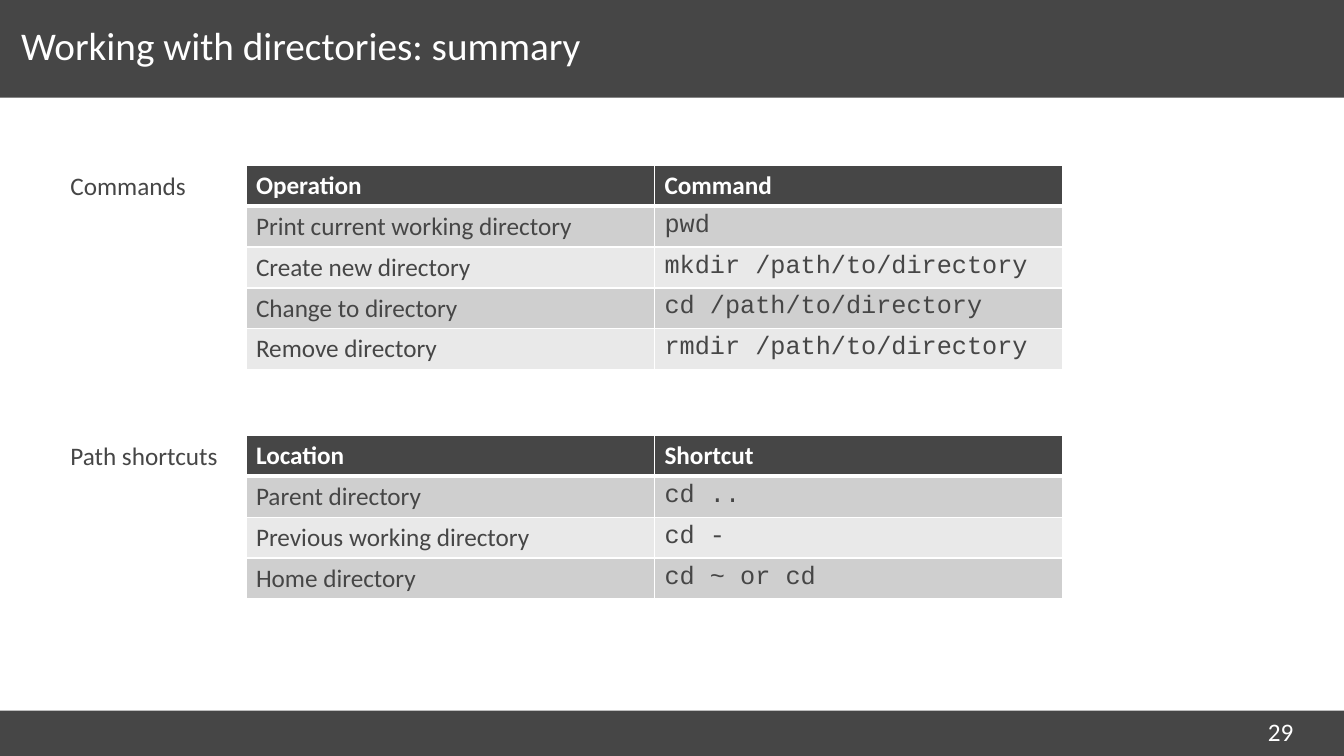
from dataclasses import dataclass
from typing import Any

from lxml import etree
from pptx import Presentation
from pptx.dml.color import RGBColor
from pptx.enum.shapes import MSO_SHAPE
from pptx.enum.text import MSO_ANCHOR, MSO_AUTO_SIZE, PP_ALIGN
from pptx.oxml.ns import qn
from pptx.util import Emu, Inches, Pt

RECT = MSO_SHAPE.RECTANGLE
LEFT = PP_ALIGN.LEFT
TOP, MIDDLE = MSO_ANCHOR.TOP, MSO_ANCHOR.MIDDLE
NO_FIT, GROW = MSO_AUTO_SIZE.NONE, MSO_AUTO_SIZE.SHAPE_TO_FIT_TEXT
SLIDE_W, SLIDE_H = Inches(13.33), Inches(7.5)
GRID = 100
TABLE_X, TABLE_COL, TABLE_ROW = 18.3, 30.4, 5.41
LABEL_X, LABEL_H = 4.5, 5.33


@dataclass(frozen=True)
class Theme:
    """Colours, fonts, type sizes and rule widths of the slide."""
    dark: str = "464646"
    light: str = "FFFFFF"
    bands: tuple[str, str] = ("CFCFCF", "E9E9E9")
    body: str = "Calibri"
    code: str = "Courier New"
    title_size: int = 28
    text_size: int = 18
    rule: float = 1
    header_rule: float = 3


@dataclass(frozen=True)
class Box:
    """A rectangle in grid columns and rows."""
    x: float
    y: float
    w: float
    h: float

    def emu(self) -> tuple[Emu, Emu, Emu, Emu]:
        """Return left, top, width and height as slide lengths."""
        return col(self.x), row(self.y), col(self.w), row(self.h)


@dataclass(frozen=True)
class Section:
    """A labelled two-column table whose first row is its header."""
    label: str
    label_w: float
    y: float
    rows: tuple[tuple[str, str], ...]


THEME = Theme()
BARS = (Box(0, 94, GRID, 6), Box(0, 0, GRID, 12.93))
TITLE_BOX = Box(1.58, 2.27, 86.4, 8.53)
NUMBER_BOX = Box(93.6, 94.13, 5.25, 3.33)
SECTIONS = (
    Section("Commands", 10.2, 21.87, (
        ("Operation", "Command"),
        ("Print current working directory", "pwd"),
        ("Create new directory", "mkdir /path/to/directory"),
        ("Change to directory", "cd /path/to/directory"),
        ("Remove directory", "rmdir /path/to/directory"),
    )),
    Section("Path shortcuts", 12.6, 57.6, (
        ("Location", "Shortcut"),
        ("Parent directory", "cd .."),
        ("Previous working directory", "cd -"),
        ("Home directory", "cd ~ or cd"),
    )),
)


def col(n: float) -> Emu:
    """Convert grid columns to a length."""
    return Emu(round(SLIDE_W * n / GRID))


def row(n: float) -> Emu:
    """Convert grid rows to a length."""
    return Emu(round(SLIDE_H * n / GRID))


def apply(target: Any, values: dict[str, Any]) -> None:
    """Set every attribute named in a dict of format values."""
    for name, value in values.items():
        setattr(target, name, value)


def write(tf: Any, text: str, color: str, size: int = THEME.text_size,
          font: str = THEME.body, bold: bool = False) -> None:
    """Write one left-aligned run into a text frame."""
    p = tf.paragraphs[0]
    p.alignment = LEFT
    r = p.add_run()
    r.text = text
    apply(r.font, {"name": font, "size": Pt(size), "bold": bold})
    r.font.color.rgb = RGBColor.from_string(color)


def add_text(s: Any, box: Box, text: str, color: str, fit: Any) -> None:
    """Add a single-line text box."""
    tf = s.shapes.add_textbox(*box.emu()).text_frame
    apply(tf, {"word_wrap": fit == NO_FIT, "auto_size": fit, "vertical_anchor": TOP})
    write(tf, text, color)


def add_title(s: Any, text: str) -> None:
    """Format the title placeholder and lay the bars behind it."""
    title = s.shapes.title
    apply(title, dict(zip(("left", "top", "width", "height"), TITLE_BOX.emu())))
    tf = title.text_frame
    apply(tf, {"margin_left": 0, "margin_right": 0, "word_wrap": True,
               "auto_size": NO_FIT, "vertical_anchor": MIDDLE})
    write(tf, text, THEME.light, THEME.title_size)
    tf.paragraphs[0].line_spacing = 0.8
    for box in BARS:
        bar = s.shapes.add_shape(RECT, *box.emu())
        bar.shadow.inherit = False
        bar.fill.solid()
        bar.fill.fore_color.rgb = RGBColor.from_string(THEME.dark)
        bar.line.fill.background()
        title.element.addprevious(bar.element)


def add_borders(cell: Any, top: float, bottom: float) -> None:
    """Rule the four sides of a table cell."""
    tc_pr = cell._tc.get_or_add_tcPr()
    widths = {"lnL": THEME.rule, "lnR": THEME.rule, "lnT": top, "lnB": bottom}
    for side, width in widths.items():
        ln = etree.SubElement(tc_pr, qn(f"a:{side}"), w=str(Pt(width)))
        fill = etree.SubElement(ln, qn("a:solidFill"))
        etree.SubElement(fill, qn("a:srgbClr"), val=THEME.light)


def add_section(s: Any, section: Section) -> None:
    """Add a table and the label beside it."""
    n_rows, n_cols = len(section.rows), len(section.rows[0])
    box = Box(TABLE_X, section.y, n_cols * TABLE_COL, n_rows * TABLE_ROW)
    table = s.shapes.add_table(n_rows, n_cols, *box.emu()).table
    for column in table.columns:
        column.width = col(TABLE_COL)
    for i, texts in enumerate(section.rows):
        table.rows[i].height = row(TABLE_ROW)
        header = i == 0
        fill = THEME.dark if header else THEME.bands[(i - 1) % 2]
        for j, text in enumerate(texts):
            cell = table.cell(i, j)
            add_borders(cell, THEME.header_rule if i == 1 else THEME.rule,
                        THEME.header_rule if header else THEME.rule)
            cell.fill.solid()
            cell.fill.fore_color.rgb = RGBColor.from_string(fill)
            write(cell.text_frame, text, THEME.light if header else THEME.dark,
                  font=THEME.code if j and not header else THEME.body, bold=header)
    label_box = Box(LABEL_X, section.y, section.label_w, LABEL_H)
    add_text(s, label_box, section.label, THEME.dark, GROW)


def main() -> None:
    """Build the slide and save it."""
    prs = Presentation()
    apply(prs, {"slide_width": SLIDE_W, "slide_height": SLIDE_H})
    s = prs.slides.add_slide(prs.slide_layouts.get_by_name("Title Only"))
    add_title(s, "Working with directories: summary")
    add_text(s, NUMBER_BOX, "29", THEME.light, NO_FIT)
    for section in SECTIONS:
        add_section(s, section)
    prs.save("out.pptx")


if __name__ == "__main__":
    main()
